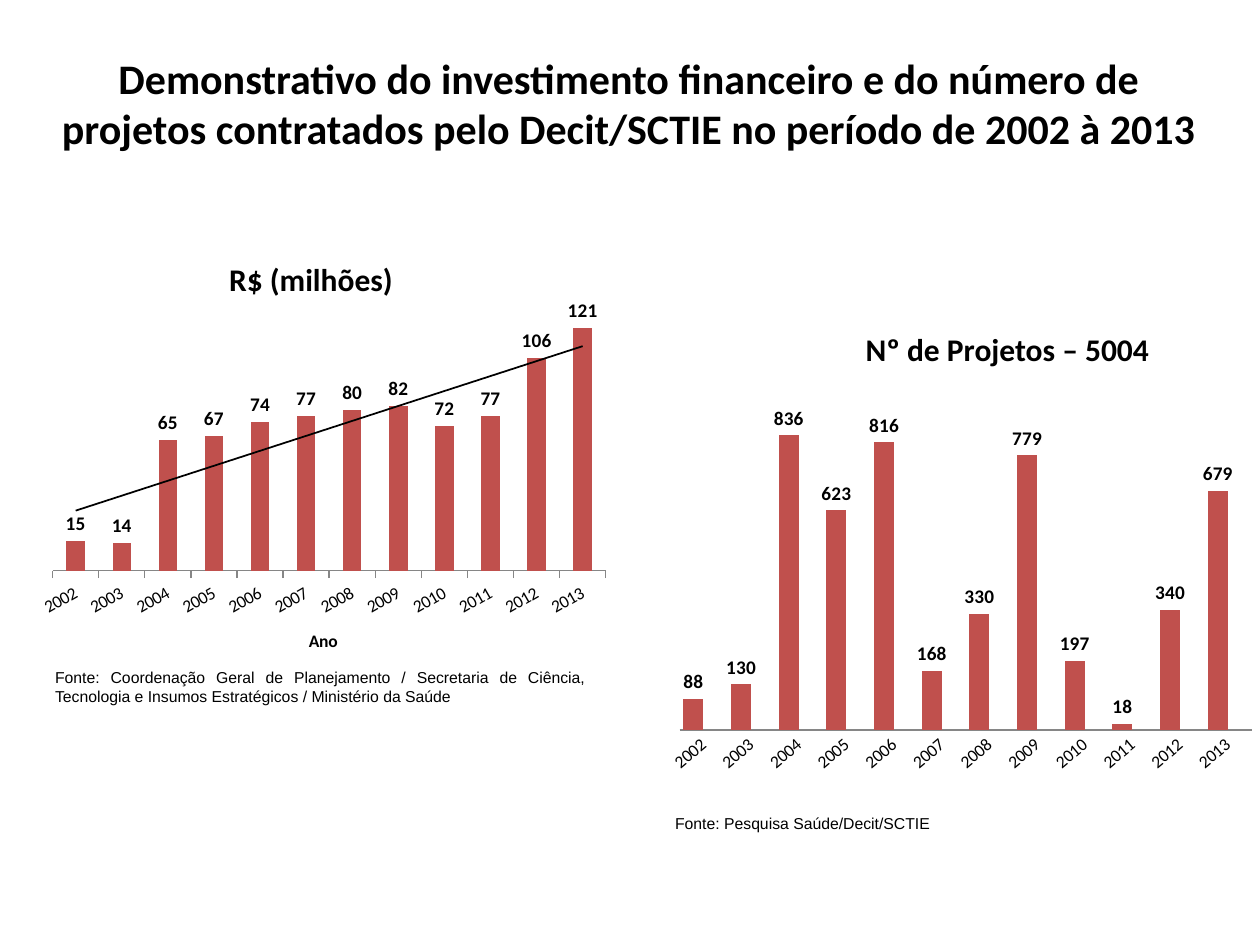
from lxml import etree
from pptx import Presentation
from pptx.chart.data import CategoryChartData
from pptx.dml.color import RGBColor
from pptx.enum.chart import XL_CHART_TYPE as CT, XL_LABEL_POSITION as LP, XL_TICK_MARK as TM
from pptx.enum.text import MSO_ANCHOR as ANCHOR, MSO_AUTO_SIZE as AUTO, PP_ALIGN as ALIGN
from pptx.oxml import parse_xml
from pptx.oxml.ns import nsdecls, qn
from pptx.util import Cm, Pt

COLORS = {"text": "000000", "bar": "C0504D", "spare": "9BBB59", "axis": "868686"}
YEARS = [str(year) for year in range(2002, 2014)]
INVESTMENT = [15, 14, 65, 67, 74, 77, 80, 82, 72, 77, 106, 121]
PROJECTS = [88, 130, 836, 623, 816, 168, 330, 779, 197, 18, 340, 679]


def rgb(name):
    return RGBColor.from_string(COLORS[name])


class SlideBuilder:
    heading = {"name": "Calibri", "size": Pt(18), "bold": True}
    title_font = {**heading, "size": Pt(24)}
    source = {"name": "Arial", "size": Pt(9), "bold": False}
    chart_font = {"name": "Calibri", "size": Pt(10)}
    label_font = {"name": "Calibri", "size": Pt(11), "bold": True}

    def __init__(self, slide):
        self.s = slide

    def style(self, font, values):
        for name, value in values.items():
            setattr(font, name, value)
        font.color.rgb = rgb("text")

    def fill_text(self, sp, text, values, align):
        tf = sp.text_frame
        tf.word_wrap = True
        p = tf.paragraphs[0]
        p.alignment = align
        r = p.add_run()
        r.text = text
        self.style(r.font, values)
        return tf

    def title(self, box, text):
        sp = self.s.shapes.title
        for name, value in zip(("left", "top", "width", "height"), box):
            setattr(sp, name, Cm(value))
        tf = self.fill_text(sp, text, self.title_font, ALIGN.CENTER)
        tf.auto_size = AUTO.NONE
        tf.vertical_anchor = ANCHOR.MIDDLE

    def text(self, box, text, values, align=ALIGN.LEFT):
        sp = self.s.shapes.add_textbox(*map(Cm, box))
        tf = self.fill_text(sp, text, values, align)
        tf.auto_size = AUTO.SHAPE_TO_FIT_TEXT

    def columns(self, box, series, top, gap, plot_box, tick, angle):
        data = CategoryChartData()
        data.categories = YEARS
        for name, values, _ in series:
            data.add_series(name, values)
        chart = self.s.shapes.add_chart(CT.COLUMN_CLUSTERED, *map(Cm, box), data).chart
        chart.has_legend = chart.has_title = False
        self.style(chart.font, self.chart_font)

        # Columns and their values
        plot = chart.plots[0]
        plot.gap_width, plot.overlap, plot.vary_by_categories = gap, 0, False
        for ser, (_, _, color) in zip(plot.series, series):
            ser.format.fill.solid()
            ser.format.fill.fore_color.rgb = rgb(color)
            labels = ser.data_labels
            labels.show_value = True
            labels.position = LP.OUTSIDE_END
            self.style(labels.font, self.label_font)

        # Axes
        val = chart.value_axis
        val.minimum_scale, val.maximum_scale = 0, top
        val.has_major_gridlines = val.visible = False
        cat = chart.category_axis
        cat.major_tick_mark, cat.minor_tick_mark = tick, TM.NONE
        cat.format.line.color.rgb = rgb("axis")
        self.style(cat.tick_labels.font, self.chart_font)
        body = cat._element.find(qn("c:txPr")).find(qn("a:bodyPr"))
        body.set("rot", str(angle * 60000))
        body.set("vert", "horz")
        self.place_plot(chart, plot_box)
        return chart

    def place_plot(self, chart, plot_box):
        area = chart.element.find(".//" + qn("c:plotArea"))
        for old in area.findall(qn("c:layout")):
            area.remove(old)
        layout = parse_xml(f"<c:layout {nsdecls('c')}><c:manualLayout/></c:layout>")
        settings = [("layoutTarget", "inner"), ("xMode", "edge"), ("yMode", "edge")]
        for name, value in settings + list(zip("xywh", plot_box)):
            etree.SubElement(layout[0], qn(f"c:{name}")).set("val", str(value))
        area.insert(0, layout)

    def axis_title(self, chart, text):
        tf = chart.category_axis.axis_title.text_frame
        tf.text = text
        self.style(tf.paragraphs[0].runs[0].font, {**self.chart_font, "bold": True})

    def trend(self, chart):
        line = parse_xml(
            f'<c:trendline {nsdecls("c", "a")}><c:spPr><a:ln w="12700"><a:solidFill>'
            f'<a:srgbClr val="{COLORS["text"]}"/></a:solidFill></a:ln></c:spPr>'
            '<c:trendlineType val="linear"/><c:dispRSqr val="0"/><c:dispEq val="0"/>'
            '</c:trendline>')
        chart.plots[0].series[0]._element.find(qn("c:cat")).addprevious(line)


def main():
    prs = Presentation()
    prs.slide_width, prs.slide_height = Cm(25.4), Cm(19.05)
    b = SlideBuilder(prs.slides.add_slide(prs.slide_layouts[5]))

    b.title((0.89, 0.91, 23.57, 2.31),
            "Demonstrativo do investimento financeiro e do número de projetos "
            "contratados pelo Decit/SCTIE no período de 2002 à 2013")

    # Number of projects; the empty second series keeps its place beside each column
    b.columns((13.08, 7.92, 12.4, 8), [("Series 1", PROJECTS, "bar"),
                                       ("Series 2", [None] * len(YEARS), "spare")],
              900, 39, (0.05, 0.05, 0.93, 0.8), TM.NONE, -40)
    b.text((17.2, 6.53, 6.88, 1.02), "Nº de Projetos – 5004", b.heading)
    b.text((13.36, 16.28, 9.96, 0.64), "Fonte: Pesquisa Saúde/Decit/SCTIE",
           b.source, ALIGN.JUSTIFY)

    # Investment
    chart = b.columns((-0.89, 4.72, 13.94, 8.59), [("Series 1", INVESTMENT, "bar")],
                      140, 150, (0.14, 0.13, 0.8, 0.66), TM.OUTSIDE, -30)
    b.axis_title(chart, "Ano")
    b.trend(chart)
    b.text((4.37, 5.11, 4.17, 1.02), "R$ (milhões)", b.heading)
    b.text((0.86, 13.34, 11.18, 1.02),
           "Fonte: Coordenação Geral de Planejamento / Secretaria de Ciência, "
           "Tecnologia e Insumos Estratégicos / Ministério da Saúde",
           b.source, ALIGN.JUSTIFY)

    prs.save("out.pptx")


if __name__ == "__main__":
    main()
